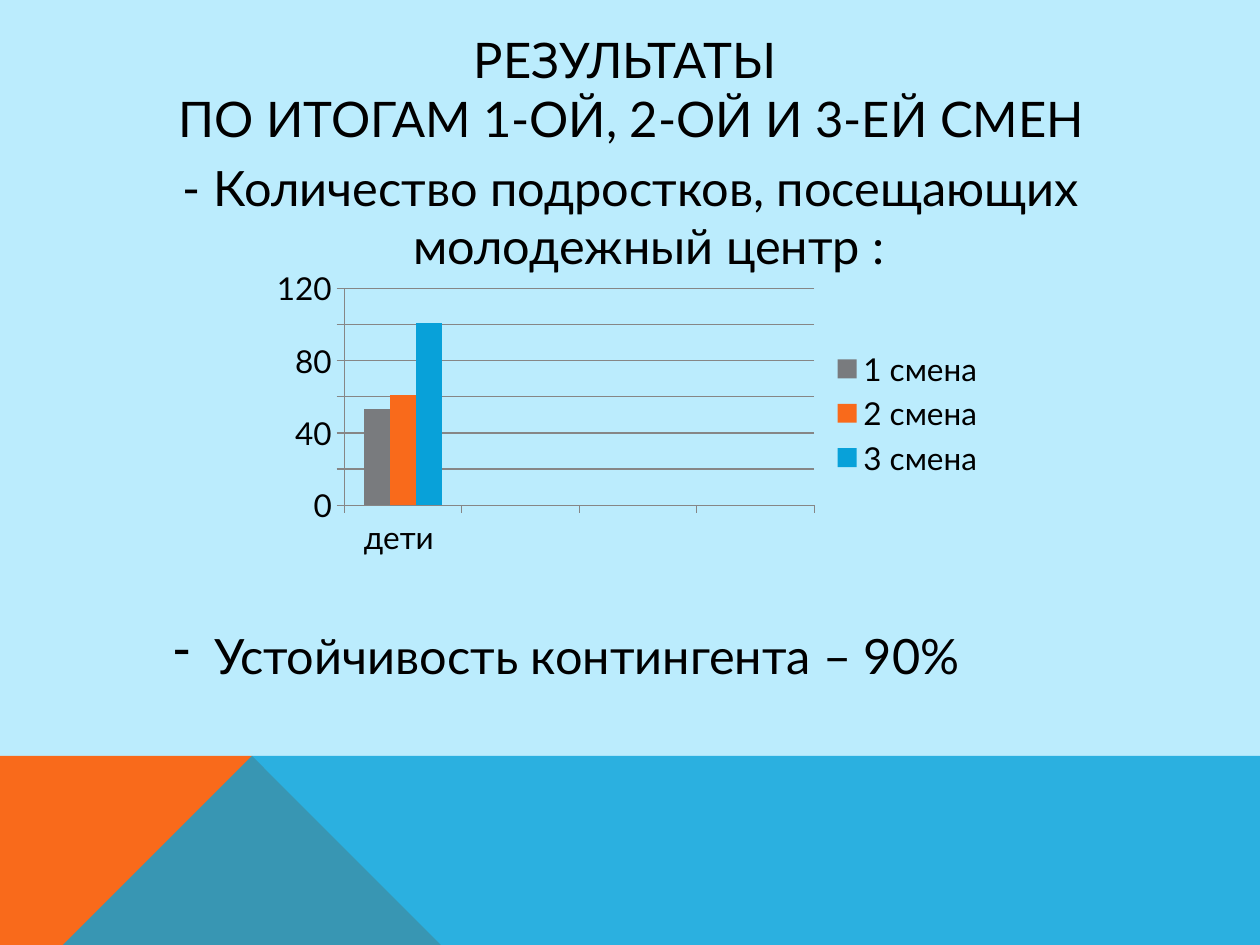
from dataclasses import dataclass

from lxml.etree import SubElement
from pptx import Presentation
from pptx.chart.data import CategoryChartData
from pptx.dml.color import RGBColor
from pptx.enum.chart import XL_CHART_TYPE, XL_LEGEND_POSITION, XL_TICK_MARK
from pptx.enum.text import MSO_ANCHOR, PP_ALIGN
from pptx.oxml import parse_xml
from pptx.oxml.ns import nsdecls, qn
from pptx.util import Inches, Pt


@dataclass(frozen=True)
class Theme:
    font: str = "Lato"
    title_size: float = 28
    body_size: float = 27.8
    chart_size: float = 18
    text: RGBColor = RGBColor.from_string("000000")
    background: RGBColor = RGBColor.from_string("BBECFD")
    gray: RGBColor = RGBColor.from_string("797B7E")
    orange: RGBColor = RGBColor.from_string("F96A1B")
    blue: RGBColor = RGBColor.from_string("08A1D9")
    grid: RGBColor = RGBColor.from_string("868686")


theme = Theme()
LEFT, WIDTH = Inches(0.9), Inches(8.22)

presentation = Presentation()
presentation.slide_width, presentation.slide_height = Inches(10), Inches(7.5)
slide = presentation.slides.add_slide(presentation.slide_layouts[6])
slide.background.fill.solid()
slide.background.fill.fore_color.rgb = theme.background


def add_text(text, top, height, size, align=PP_ALIGN.LEFT,
             anchor=MSO_ANCHOR.TOP, margin=0, indent=0, bullet=None):
    frame = slide.shapes.add_textbox(LEFT, Inches(top), WIDTH, Inches(height)).text_frame
    frame.word_wrap = True
    frame.vertical_anchor = anchor
    paragraph = frame.paragraphs[0]
    paragraph.text = text
    paragraph.alignment = align
    paragraph.font.name = theme.font
    paragraph.font.size = Pt(size)
    paragraph.font.color.rgb = theme.text
    for run in paragraph.runs:
        run.font.name = theme.font
        run.font.size = Pt(size)
        run.font.color.rgb = theme.text
    properties = paragraph._p.get_or_add_pPr()
    properties.set("marL", str(Inches(margin)))
    properties.set("indent", str(Inches(indent)))
    if bullet:
        mark = parse_xml(f'<a:buChar {nsdecls("a")} char="{bullet}"/>')
        properties.insert_element_before(mark, "a:tabLst", "a:defRPr", "a:extLst")


# Bottom band: orange wedge under a translucent blue field
bands = [
    ([(0, 7.5), (0, 5.52), (2.23, 5.52), (3.91, 7.5)], theme.orange, 100),
    ([(0, 7.5), (2.23, 5.52), (10, 5.53), (10, 7.5)], theme.blue, 80),
]
for points, color, opacity in bands:
    builder = slide.shapes.build_freeform(*points[0], scale=Inches(1))
    builder.add_line_segments(points[1:], close=True)
    band = builder.convert_to_shape()
    band.shadow.inherit = False
    band.line.fill.background()
    band.fill.solid()
    band.fill.fore_color.rgb = color
    if opacity < 100:
        color_node = band._element.spPr.find(qn("a:solidFill"))[0]
        SubElement(color_node, qn("a:alpha")).set("val", str(opacity * 1000))

# Title and statements
add_text("РЕЗУЛЬТАТЫ \vПО ИТОГАМ 1-ОЙ, 2-ОЙ И 3-ЕЙ СМЕН", 0.4, 0.6,
         theme.title_size, align=PP_ALIGN.CENTER, anchor=MSO_ANCHOR.MIDDLE)
add_text("- Количество подростков, посещающих молодежный центр : ", 1.2, 1,
         theme.body_size, align=PP_ALIGN.CENTER, margin=0.38, indent=-0.38)
add_text("Устойчивость контингента – 90%", 4.92, 0.56,
         theme.body_size, margin=0.7, indent=-0.32, bullet="-")

# Attendance chart: three unnamed categories stay empty
shifts = [
    ("1 смена", 53, theme.gray),
    ("2 смена", 61, theme.orange),
    ("3 смена", 101, theme.blue),
]
attendance = CategoryChartData()
attendance.categories = ["дети ", "", "", ""]
for name, children, _ in shifts:
    attendance.add_series(name, [children, None, None, None])
chart = slide.shapes.add_chart(
    XL_CHART_TYPE.COLUMN_CLUSTERED, Inches(2.09), Inches(2.1),
    Inches(5.83), Inches(2.36), attendance).chart
chart.has_title = False
chart.font.name = theme.font
chart.font.size = Pt(theme.chart_size)
chart.font.color.rgb = theme.text
chart.has_legend = True
chart.legend.position = XL_LEGEND_POSITION.RIGHT
chart.legend.include_in_layout = False

columns = chart.plots[0]
columns.gap_width = 150
columns.overlap = 0
columns.vary_by_categories = False
for series, (_, _, color) in zip(columns.series, shifts):
    series.invert_if_negative = False
    series.format.fill.solid()
    series.format.fill.fore_color.rgb = color

# Axes and gridlines
children_axis = chart.value_axis
children_axis.minimum_scale, children_axis.maximum_scale = 0, 120
children_axis.major_unit = 20
children_axis.has_major_gridlines = True
for axis in (chart.category_axis, children_axis):
    axis.major_tick_mark = XL_TICK_MARK.OUTSIDE
    axis.format.line.color.rgb = theme.grid
    axis.format.line.width = Pt(0.75)
gridline = children_axis.major_gridlines.format.line
gridline.color.rgb = theme.grid
gridline.width = Pt(0.75)

# Fixed plot area inside the chart frame
plot_area = chart._chartSpace.chart.plotArea
for old_layout in plot_area.findall(qn("c:layout")):
    plot_area.remove(old_layout)
plot_area.insert(0, parse_xml(
    f'<c:layout {nsdecls("c")}><c:manualLayout><c:layoutTarget val="inner"/>'
    '<c:xMode val="edge"/><c:yMode val="edge"/><c:x val="0.11"/><c:y val="0.08"/>'
    '<c:w val="0.64"/><c:h val="0.73"/></c:manualLayout></c:layout>'))

presentation.save("out.pptx")
